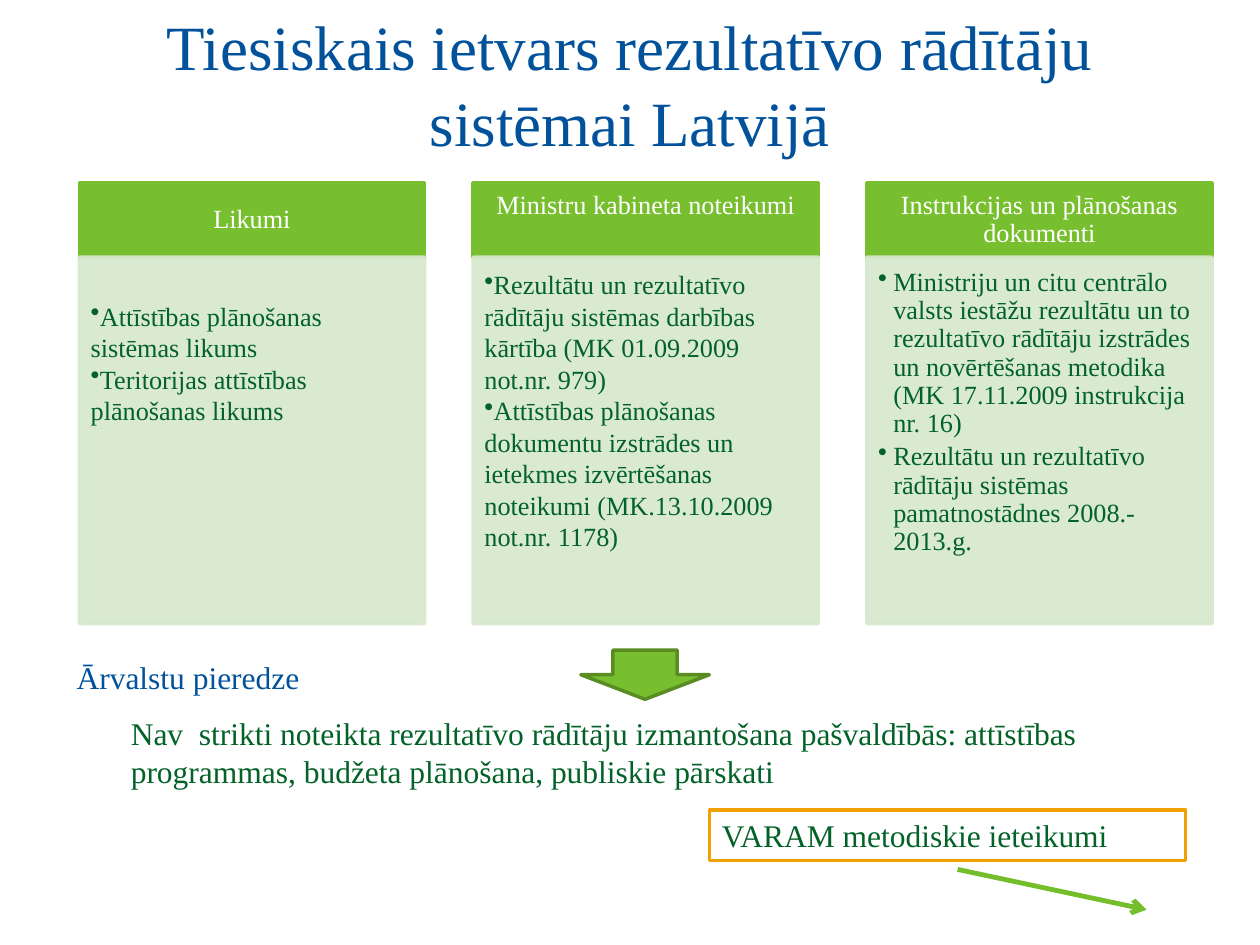
from dataclasses import dataclass

from lxml import etree
from pptx import Presentation
from pptx.dml.color import RGBColor
from pptx.enum.shapes import MSO_CONNECTOR, MSO_SHAPE
from pptx.enum.text import MSO_ANCHOR, PP_ALIGN
from pptx.oxml.ns import qn
from pptx.util import Inches, Pt

RECTANGLE = MSO_SHAPE.RECTANGLE
DOWN_ARROW = MSO_SHAPE.DOWN_ARROW
STRAIGHT = MSO_CONNECTOR.STRAIGHT
TOP, MIDDLE = MSO_ANCHOR.TOP, MSO_ANCHOR.MIDDLE
LEFT, CENTER = PP_ALIGN.LEFT, PP_ALIGN.CENTER


@dataclass(frozen=True)
class Theme:
    font: str = "Times New Roman"
    blue: str = "02529B"
    dark_green: str = "026227"
    green: str = "78BF30"
    pale_green: str = "D6E8CD"
    arrow_edge: str = "598D24"
    pointer: str = "75BE2B"
    orange: str = "EFA003"
    white: str = "FFFFFF"
    title_size: int = 36
    note_size: int = 18
    column_size: int = 15
    outline: float = 2
    pointer_width: float = 2.75


@dataclass(frozen=True)
class Box:
    left: float
    top: float
    width: float
    height: float

    def lengths(self) -> tuple:
        return tuple(Inches(v) for v in (self.left, self.top, self.width, self.height))


@dataclass(frozen=True)
class Column:
    heading: str
    items: tuple[str, ...]
    heading_anchor: MSO_ANCHOR = MIDDLE
    top_inset: float = 0.09
    hanging: float = 0
    line_spacing: float = 1.0
    space_after: float = 0


THEME = Theme()
COLUMN_LEFT, COLUMN_RIGHT, COLUMN_WIDTH = 0.63, 9.62, 2.74
HEADING_TOP, HEADING_HEIGHT, BODY_HEIGHT = 1.45, 0.59, 2.91
HEADING_INSETS = (0.12, 0.07, 0.12, 0.07)

COLUMNS = (
    Column(
        "Likumi",
        ("Attīstības plānošanas sistēmas likums",
         "Teritorijas attīstības plānošanas likums"),
        top_inset=0.34,
    ),
    Column(
        "Ministru kabineta noteikumi",
        ("Rezultātu un rezultatīvo rādītāju sistēmas darbības kārtība "
         "(MK 01.09.2009 not.nr. 979)",
         "Attīstības plānošanas dokumentu izstrādes un ietekmes izvērtēšanas "
         "noteikumi (MK.13.10.2009 not.nr. 1178)"),
        heading_anchor=TOP,
    ),
    Column(
        "Instrukcijas un plānošanas dokumenti",
        ("Ministriju un citu centrālo valsts iestāžu rezultātu un to rezultatīvo "
         "rādītāju izstrādes un novērtēšanas metodika "
         "(MK 17.11.2009 instrukcija nr. 16)",
         "Rezultātu un rezultatīvo rādītāju sistēmas pamatnostādnes 2008.-2013.g."),
        hanging=0.12, line_spacing=0.9, space_after=2.5,
    ),
)


def set_frame(shape, anchor, insets=(0.1, 0.05, 0.1, 0.05)):
    frame = shape.text_frame
    frame.word_wrap = True
    frame.vertical_anchor = anchor
    (frame.margin_left, frame.margin_top,
     frame.margin_right, frame.margin_bottom) = (Inches(v) for v in insets)
    return frame


def write(paragraph, text: str, size: float, color: str, align=LEFT) -> None:
    paragraph.alignment = align
    run = paragraph.add_run()
    run.text = text
    run.font.name = THEME.font
    run.font.size = Pt(size)
    run.font.color.rgb = RGBColor.from_string(color)


def add_label(slide, box: Box, text: str, size: float, color: str,
              align=LEFT, anchor=TOP) -> None:
    frame = set_frame(slide.shapes.add_textbox(*box.lengths()), anchor)
    write(frame.paragraphs[0], text, size, color, align)


def add_panel(slide, box: Box, fill: str, line: str, preset=RECTANGLE):
    panel = slide.shapes.add_shape(preset, *box.lengths())
    panel.shadow.inherit = False
    panel.fill.solid()
    panel.fill.fore_color.rgb = RGBColor.from_string(fill)
    panel.line.color.rgb = RGBColor.from_string(line)
    panel.line.width = Pt(THEME.outline)
    return panel


def set_opacity(panel, percent: int) -> None:
    for color in panel.element.spPr.iter(qn("a:srgbClr")):
        etree.SubElement(color, qn("a:alpha"), val=str(percent * 1000))


def add_bullet(paragraph, hanging: float) -> None:
    properties = paragraph._p.get_or_add_pPr()
    properties.set("marL", str(Inches(hanging)))
    properties.set("indent", str(-Inches(hanging)))
    etree.SubElement(properties, qn("a:buChar"), char="•")


def add_column(slide, column: Column, left: float) -> None:
    heading = add_panel(slide, Box(left, HEADING_TOP, COLUMN_WIDTH, HEADING_HEIGHT),
                        THEME.green, THEME.green)
    frame = set_frame(heading, column.heading_anchor, HEADING_INSETS)
    write(frame.paragraphs[0], column.heading, THEME.column_size, THEME.white, CENTER)
    frame.paragraphs[0].line_spacing = 0.9

    body = add_panel(
        slide, Box(left, HEADING_TOP + HEADING_HEIGHT, COLUMN_WIDTH, BODY_HEIGHT),
        THEME.pale_green, THEME.pale_green)
    set_opacity(body, 90)
    frame = set_frame(body, TOP, (0.09, column.top_inset, 0.12, 0.13))
    for index, item in enumerate(column.items):
        paragraph = frame.add_paragraph() if index else frame.paragraphs[0]
        add_bullet(paragraph, column.hanging)
        paragraph.line_spacing = column.line_spacing
        paragraph.space_after = Pt(column.space_after)
        write(paragraph, item, THEME.column_size, THEME.dark_green)


def add_pointer(slide, start: tuple[float, float], end: tuple[float, float]) -> None:
    pointer = slide.shapes.add_connector(STRAIGHT, *(Inches(v) for v in start + end))
    pointer.line.color.rgb = RGBColor.from_string(THEME.pointer)
    pointer.line.width = Pt(THEME.pointer_width)
    etree.SubElement(pointer.line._get_or_add_ln(), qn("a:tailEnd"), type="arrow")
    etree.SubElement(pointer.element.spPr, qn("a:effectLst"))


def main() -> None:
    presentation = Presentation()
    presentation.slide_width = Inches(10)
    presentation.slide_height = Inches(7.5)
    slide = presentation.slides.add_slide(presentation.slide_layouts[6])

    # Title
    add_label(slide, Box(0.5, 0.3, 9, 0.72),
              "Tiesiskais ietvars rezultatīvo rādītāju sistēmai Latvijā",
              THEME.title_size, THEME.blue, CENTER, MIDDLE)

    # Three columns of legal acts
    pitch = (COLUMN_RIGHT - COLUMN_LEFT - COLUMN_WIDTH) / (len(COLUMNS) - 1)
    for index, column in enumerate(COLUMNS):
        add_column(slide, column, COLUMN_LEFT + index * pitch)

    # Conclusion below the columns
    add_panel(slide, Box(4.61, 5.16, 1.02, 0.39), THEME.green, THEME.arrow_edge,
              DOWN_ARROW)
    add_label(slide, Box(0.94, 5.62, 8.67, 0.71),
              "Nav  strikti noteikta rezultatīvo rādītāju izmantošana pašvaldībās: "
              "attīstības programmas, budžeta plānošana, publiskie pārskati",
              THEME.note_size, THEME.dark_green)

    # Recommendations and pointer
    advice = add_panel(slide, Box(5.63, 6.43, 3.78, 0.4), THEME.white, THEME.orange)
    write(set_frame(advice, TOP).paragraphs[0], "VARAM metodiskie ieteikumi",
          THEME.note_size, THEME.dark_green)
    add_pointer(slide, (7.6, 6.9), (9.1, 7.22))

    # Foreign experience
    add_label(slide, Box(0.51, 5.17, 2.76, 0.4), "Ārvalstu pieredze",
              THEME.note_size, THEME.blue)

    presentation.save("out.pptx")


if __name__ == "__main__":
    main()
